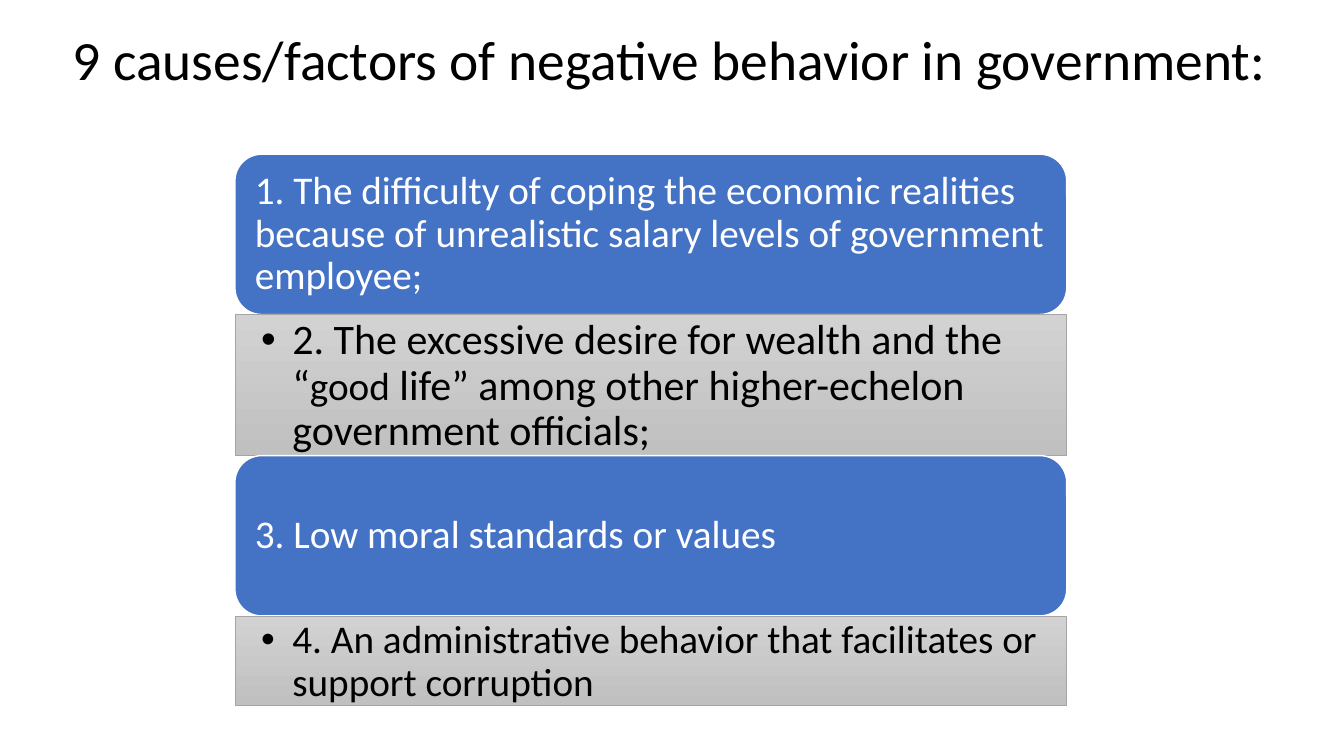
"""Build a slide on the causes of negative behavior in government."""
from lxml.etree import SubElement
from pptx import Presentation
from pptx.dml.color import RGBColor
from pptx.enum.shapes import MSO_SHAPE as Preset
from pptx.enum.text import MSO_ANCHOR as Anchor, MSO_AUTO_SIZE as AutoSize, PP_ALIGN as Align
from pptx.oxml.ns import qn
from pptx.util import Pt

PX = 9144
LIST_LEFT, LIST_TOP, LIST_WIDTH = 233, 153, 825
BLUE, WHITE, BLACK, GRAY = "4472C4", "FFFFFF", "000000", "A5A5A5"
BAND_SHADES = ("D2D2D2", "C0C0C0")
CAUSES = [
    ("heading", 159, [("1. The difficulty of coping the economic realities because of "
                       "unrealistic salary levels of government employee;", 28)]),
    ("bullet", 140, [("2. The excessive desire for wealth and the “", 30), ("good", 28),
                     (" life” among other higher-echelon government officials;", 30)]),
    ("heading", 159, [("3. Low moral standards or values", 28)]),
    ("bullet", 89, [("4. An administrative behavior that facilitates or support corruption", 28)]),
]


def rgb(code):
    """Return the colour for a hex string."""
    return RGBColor.from_string(code)


def write(frame, runs, color, insets, anchor):
    """Fill a text frame with one left-aligned paragraph and return it."""
    frame.word_wrap = True
    frame.auto_size = AutoSize.NONE
    frame.vertical_anchor = anchor
    frame.margin_left, frame.margin_top, frame.margin_right, frame.margin_bottom = (
        inset * PX for inset in insets)
    paragraph = frame.paragraphs[0]
    paragraph.alignment = Align.LEFT
    paragraph.line_spacing = 0.9
    for words, size in runs:
        run = paragraph.add_run()
        run.text = words
        run.font.size = Pt(size)
        run.font.name = "Calibri"
        run.font.color.rgb = rgb(color)
    return paragraph


def add_bullet(paragraph):
    """Give a paragraph a round bullet with a hanging indent."""
    paragraph.level = 1
    properties = paragraph._p.get_or_add_pPr()
    properties.set("marL", str(31 * PX))
    properties.set("indent", str(-31 * PX))
    SubElement(properties, qn("a:buFont")).set("typeface", "Arial")
    SubElement(properties, qn("a:buChar")).set("char", "•")


def add_box(slide, preset, top, height, line_color, line_width):
    """Add one outlined box of the list."""
    box = slide.shapes.add_shape(
        preset, LIST_LEFT * PX, top * PX, LIST_WIDTH * PX, height * PX)
    box.shadow.inherit = False
    box.line.color.rgb = rgb(line_color)
    box.line.width = Pt(line_width)
    return box


def add_heading(slide, top, height, runs):
    """Add a cause on a blue rounded box."""
    box = add_box(slide, Preset.ROUNDED_RECTANGLE, top, height, WHITE, 1)
    box.fill.solid()
    box.fill.fore_color.rgb = rgb(BLUE)
    write(box.text_frame, runs, WHITE, (12, 12, 12, 12), Anchor.MIDDLE)


def add_band(slide, top, height, runs):
    """Add a bulleted cause on a gray gradient band."""
    band = add_box(slide, Preset.RECTANGLE, top, height, GRAY, 0.5)
    band.fill.gradient()
    band.fill.gradient_angle = 270
    for stop, position, shade in zip(band.fill.gradient_stops, (0, 1), BAND_SHADES):
        stop.position = position
        stop.color.rgb = rgb(shade)
    add_bullet(write(band.text_frame, runs, BLACK, (26, 4, 22, 4), Anchor.TOP))


def add_title(slide, words):
    """Place and format the slide title."""
    title = slide.shapes.title
    title.left, title.top, title.width, title.height = 0, 0, 1321 * PX, 125 * PX
    write(title.text_frame, [(words, 39.6)], BLACK, (72, 5, 10, 5), Anchor.MIDDLE)


def main():
    """Build and save the slide."""
    deck = Presentation()
    deck.slide_width, deck.slide_height = 1333 * PX, 750 * PX
    slide = deck.slides.add_slide(deck.slide_layouts[5])
    add_title(slide, "9 causes/factors of negative behavior in government:")
    builders = {"heading": add_heading, "bullet": add_band}
    top = LIST_TOP
    for kind, height, runs in CAUSES:
        builders[kind](slide, top, height, runs)
        top += height
    deck.save("out.pptx")


if __name__ == "__main__":
    main()
